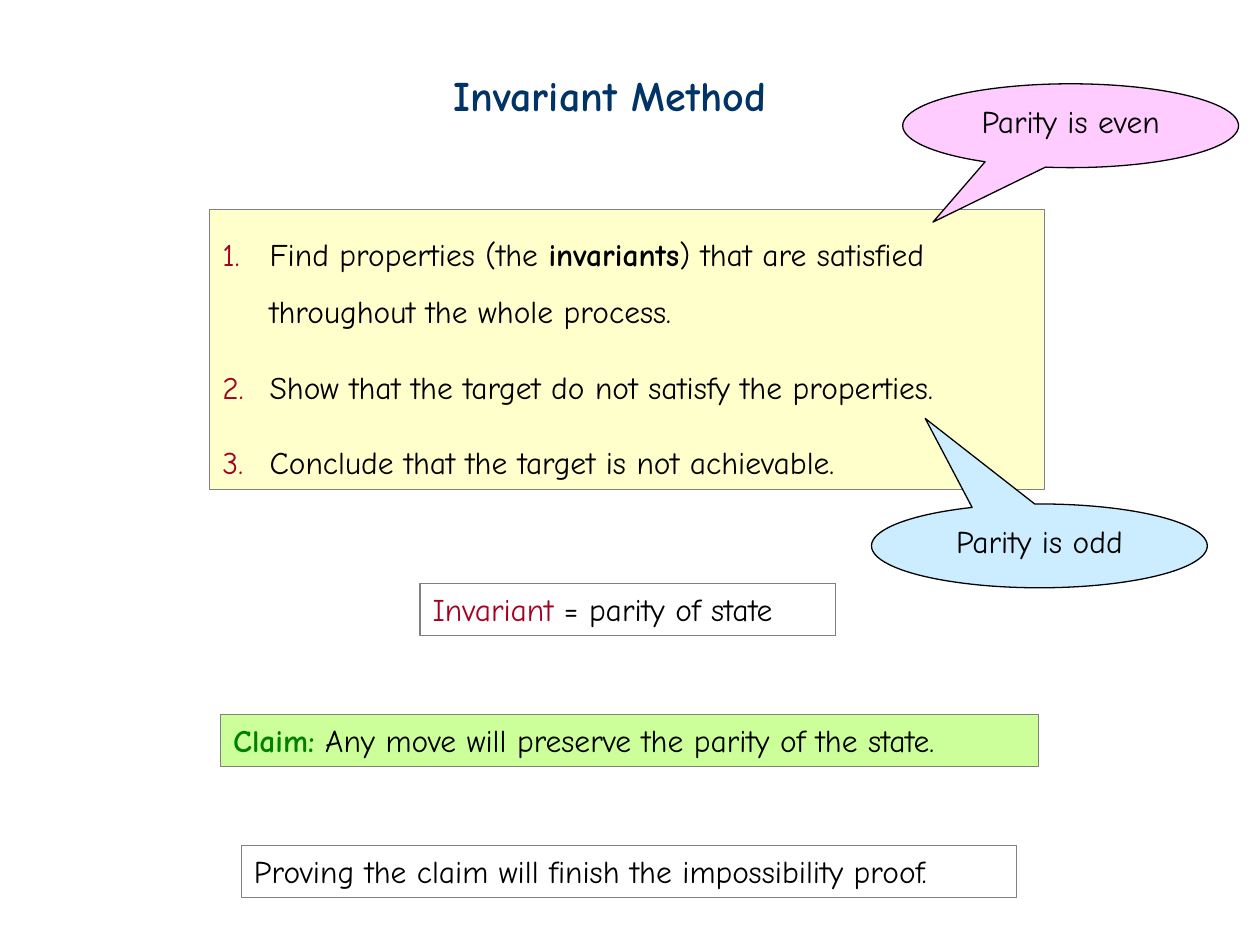
from pptx import Presentation
from pptx.util import Cm, Pt
from pptx.dml.color import RGBColor
from pptx.enum.shapes import MSO_SHAPE
from pptx.enum.text import MSO_ANCHOR, MSO_AUTO_SIZE, PP_ALIGN
from pptx.oxml.ns import qn
from lxml.etree import SubElement

FONT = "Comic Neue"
BLACK, GREY, RED = "000000", "808080", "A50021"


def rgb(code):
    return RGBColor.from_string(code)


def place(shape, left, top, width, height):
    shape.left, shape.top = Cm(left), Cm(top)
    shape.width, shape.height = Cm(width), Cm(height)


def paint(shape, fill, line):
    if fill:
        shape.fill.solid()
        shape.fill.fore_color.rgb = rgb(fill)
    else:
        shape.fill.background()
    shape.line.color.rgb = rgb(line)
    shape.line.width = Pt(0.75)


def setup(frame):
    frame.word_wrap = True
    frame.auto_size = MSO_AUTO_SIZE.NONE
    frame.vertical_anchor = MSO_ANCHOR.TOP


def write(para, parts, size=18, align=PP_ALIGN.LEFT):
    """Fill a paragraph with (text, colour, bold) parts."""
    para.alignment = align
    for text, color, bold in parts:
        run = para.add_run()
        run.text = text
        font = run.font
        font.name, font.size, font.bold = FONT, Pt(size), bold
        font.color.rgb = rgb(color)


def number(para):
    """Give a paragraph a red automatic number and a hanging indent."""
    props = para._p.get_or_add_pPr()
    props.set("marL", str(Cm(0.95)))
    props.set("indent", str(-Cm(0.95)))
    tint = SubElement(props, qn("a:buClr"))
    SubElement(tint, qn("a:srgbClr"), val=RED)
    SubElement(props, qn("a:buFont"), typeface=FONT)
    SubElement(props, qn("a:buAutoNum"), type="arabicPeriod")


def add_title(slide, text):
    title = slide.shapes.title
    place(title, 8.89, 1.27, 7.67, 1.27)
    setup(title.text_frame)
    write(title.text_frame.paragraphs[0], [(text, "003366", True)], 24)


def add_steps(slide, steps):
    body = slide.placeholders[1]
    place(body, 4.23, 4.23, 16.83, 5.64)
    paint(body, "FFFFCC", GREY)
    frame = body.text_frame
    setup(frame)
    for i, parts in enumerate(steps):
        para = frame.add_paragraph() if i else frame.paragraphs[0]
        para.line_spacing = 1.0 if i else 1.5
        para.space_before = Pt(21.7 if i else 0)
        number(para)
        write(para, parts)


def add_shape(slide, kind, spot, fill, line, parts, align=PP_ALIGN.LEFT):
    shape = slide.shapes.add_shape(kind, *map(Cm, spot))
    shape.shadow.inherit = False
    paint(shape, fill, line)
    setup(shape.text_frame)
    write(shape.text_frame.paragraphs[0], parts, align=align)
    return shape


def add_bubble(slide, left, top, fill, text, tip):
    bubble = add_shape(slide, MSO_SHAPE.OVAL_CALLOUT, (left, top, 6.77, 1.69),
                       fill, BLACK, [(text, BLACK, False)], PP_ALIGN.CENTER)
    bubble.adjustments[0], bubble.adjustments[1] = tip


def main():
    prs = Presentation()
    prs.slide_width, prs.slide_height = Cm(25.4), Cm(19.05)
    slide = prs.slides.add_slide(prs.slide_layouts[1])

    # Title and numbered method
    add_title(slide, "Invariant Method")
    add_steps(slide, [
        [("Find properties (the ", BLACK, False),
         ("invariants", BLACK, True),
         (") that are satisfied throughout the whole process.", BLACK, False)],
        [("Show that the target do not satisfy the properties.", BLACK, False)],
        [("Conclude that the target is not achievable.", BLACK, False)],
    ])

    # Statements below, evenly spaced
    rows = [
        (8.47, 8.38, None, [("Invariant", RED, False),
                            (" = parity of state", BLACK, False)]),
        (4.45, 16.48, "CCFF99", [
            ("Claim:", "008000", True),
            (" Any move will preserve the parity of the state.", BLACK, False)]),
        (4.87, 15.62, "FFFFFF", [
            ("Proving the claim will finish the impossibility proof.",
             BLACK, False)]),
    ]
    for i, (left, width, fill, parts) in enumerate(rows):
        add_shape(slide, MSO_SHAPE.RECTANGLE,
                  (left, 11.77 + 2.64 * i, width, 1.04), fill, GREY, parts)

    # Callouts on the steps
    add_bubble(slide, 18.2, 1.69, "FFCCFF", "Parity is even", (-0.41, 1.15))
    add_bubble(slide, 17.57, 10.16, "CCECFF", "Parity is odd", (-0.34, -1.52))

    prs.save("out.pptx")


if __name__ == "__main__":
    main()
